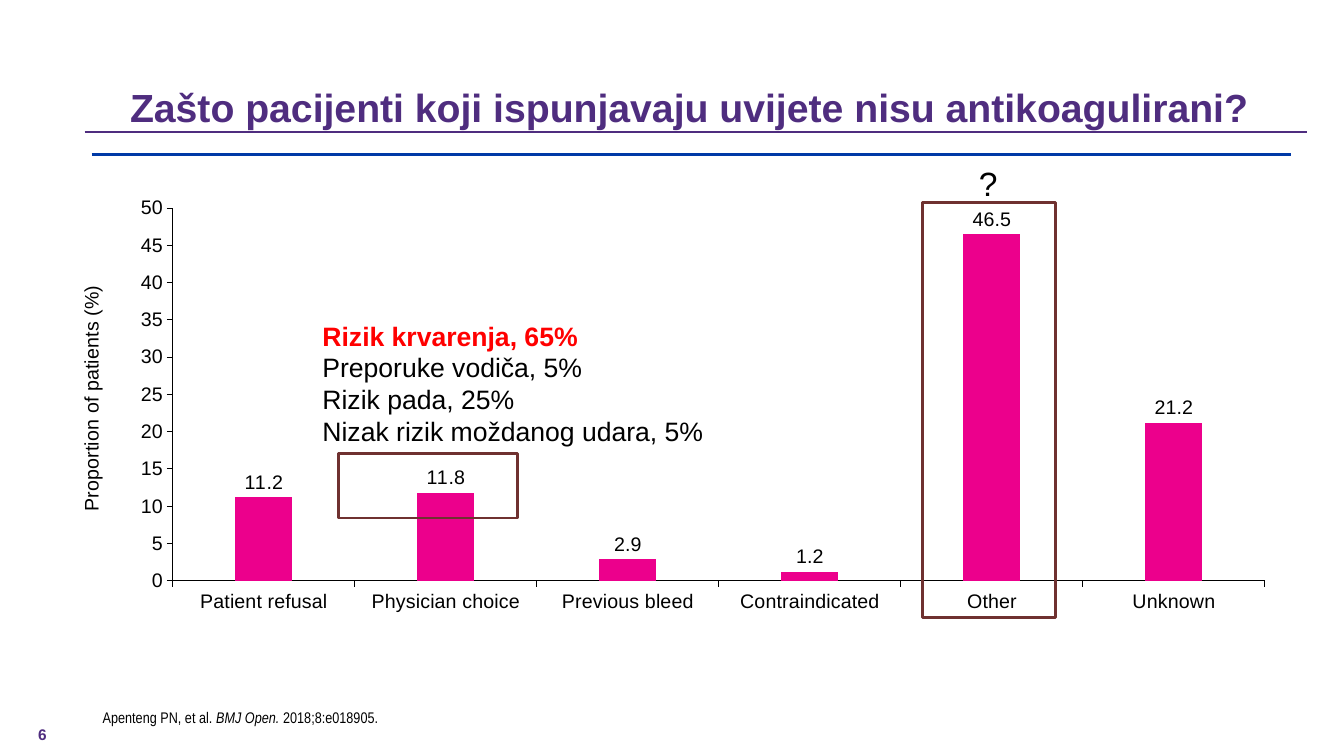
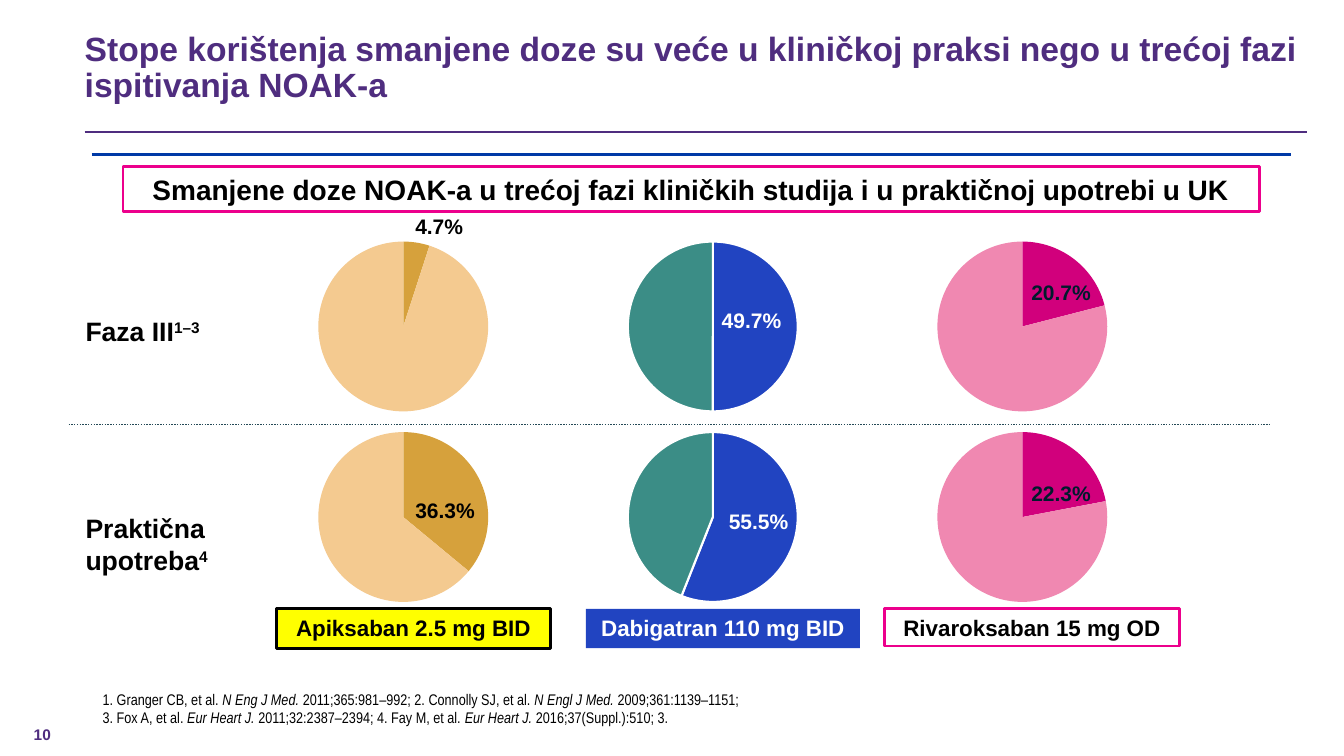
from lxml import etree
from pptx import Presentation
from pptx.chart.data import CategoryChartData
from pptx.dml.color import RGBColor
from pptx.enum.chart import XL_CHART_TYPE as CHART, XL_LABEL_POSITION, XL_TICK_MARK
from pptx.enum.dml import MSO_LINE
from pptx.enum.shapes import MSO_CONNECTOR, MSO_SHAPE
from pptx.enum.text import MSO_ANCHOR as ANCHOR, MSO_AUTO_SIZE, PP_ALIGN as ALIGN
from pptx.oxml import parse_xml
from pptx.oxml.ns import nsdecls, qn
from pptx.util import Inches, Pt

rgb = RGBColor.from_string
PURPLE, NAVY, MAGENTA, BLUE = "4F2D7F", "0039A6", "EC008C", "2144C1"
BLACK, WHITE, RED, BROWN = "000000", "FFFFFF", "FF0000", "6F3130"


def add_text(slide, box, lines, size, color=BLACK, bold=False, font="Arial",
             align=ALIGN.LEFT, anchor=ANCHOR.TOP, fill=None, outline=None, margin=True):
    """Add text, in a rectangle if filled; *...* is italic and ^...^ is superscript."""
    place = [Inches(v) for v in box]
    if fill:
        shape = slide.shapes.add_shape(MSO_SHAPE.RECTANGLE, *place)
        shape.shadow.inherit = False
        shape.fill.solid()
        shape.fill.fore_color.rgb = rgb(fill)
        if outline:
            shape.line.color.rgb = rgb(outline)
            shape.line.width = Pt(2)
        else:
            shape.line.fill.background()
    else:
        shape = slide.shapes.add_textbox(*place)
    frame = shape.text_frame
    frame.word_wrap = True
    frame.vertical_anchor = anchor
    if not margin:
        frame.margin_left = frame.margin_right = frame.margin_top = frame.margin_bottom = 0
    for number, line in enumerate(lines):
        paragraph = frame.add_paragraph() if number else frame.paragraphs[0]
        paragraph.alignment = align
        paragraph.font.size = Pt(size)
        paragraph.font.name = font
        paragraph.font.bold = bold
        paragraph.font.color.rgb = rgb(color)
        mark = "^" if "^" in line else "*"
        for index, part in enumerate(line.split(mark)):
            if not part:
                continue
            run = paragraph.add_run()
            run.text = part
            if index % 2 and mark == "*":
                run.font.italic = True
            elif index % 2:
                run._r.get_or_add_rPr().set("baseline", "30000")
    return frame


def add_chart(slide, kind, box, plot, categories, values, size):
    """Add a one-series chart without background; plot gives the plot area as fractions."""
    data = CategoryChartData()
    data.categories = categories
    data.add_series("Series 1", values)
    chart = slide.shapes.add_chart(kind, *[Inches(v) for v in box], data).chart
    chart.has_legend = chart.has_title = False
    chart.font.size = Pt(size)
    chart.font.name = "Arial"
    chart.font.color.rgb = rgb(BLACK)
    root = chart._chartSpace
    root.find(qn("c:chart")).addnext(parse_xml(
        f'<c:spPr {nsdecls("c", "a")}><a:noFill/><a:ln><a:noFill/></a:ln></c:spPr>'))
    area = root.find(".//" + qn("c:plotArea"))
    for old in area.findall(qn("c:layout")):
        area.remove(old)
    sizes = "".join(f'<c:{k} val="{v}"/>' for k, v in zip("xywh", plot))
    area.insert(0, parse_xml(
        f'<c:layout {nsdecls("c")}><c:manualLayout><c:layoutTarget val="inner"/>'
        f'<c:xMode val="edge"/><c:yMode val="edge"/>{sizes}</c:manualLayout></c:layout>'))
    return chart


prs = Presentation()
prs.slide_width, prs.slide_height = Inches(13.33), Inches(7.5)

# Title, rules and slide number
headers = [
    ("Zašto pacijenti koji ispunjavaju uvijete nisu antikoagulirani?",
     28, ALIGN.CENTER, (0.89, 0.03, 11.89, 1.27), "6"),
    ("Stope korištenja smanjene doze su veće u kliničkoj praksi nego u trećoj fazi "
     "ispitivanja NOAK-a", 24, ALIGN.LEFT, (0.84, 0.31, 12.13, 0.73), "10"),
]
header_rules = [(0.84, 12.96, 1.31, PURPLE, 1, None), (0.91, 12.8, 1.53, NAVY, 2.25, None)]
row_divider = (0.68, 12.61, 4.21, "244956", 1, MSO_LINE.ROUND_DOT)
slides = []
for (heading, size, align, box, number), extra in zip(headers, ([], [row_divider])):
    slide = prs.slides.add_slide(prs.slide_layouts[5])
    slides.append(slide)
    title = slide.shapes.title
    title.left, title.top, title.width, title.height = [Inches(v) for v in box]
    frame = title.text_frame
    frame.text = heading
    frame.auto_size = MSO_AUTO_SIZE.NONE
    frame.vertical_anchor = ANCHOR.BOTTOM
    frame.margin_left = frame.margin_right = frame.margin_top = frame.margin_bottom = 0
    paragraph = frame.paragraphs[0]
    paragraph.alignment = align
    paragraph.line_spacing = 0.9
    paragraph.font.size = Pt(size)
    paragraph.font.name = "Arial"
    paragraph.font.bold = True
    paragraph.font.color.rgb = rgb(PURPLE)
    for left, right, y, color, width, dash in header_rules + extra:
        rule = slide.shapes.add_connector(
            MSO_CONNECTOR.STRAIGHT, Inches(left), Inches(y), Inches(right), Inches(y))
        rule.line.color.rgb = rgb(color)
        rule.line.width = Pt(width)
        if dash:
            rule.line.dash_style = dash
        etree.SubElement(rule._element.spPr, qn("a:effectLst"))
    add_text(slide, (0, 7.19, 0.84, 0.19), [number], 11, PURPLE, True,
             align=ALIGN.CENTER, anchor=ANCHOR.BOTTOM, margin=False)
reasons, doses = slides

# Reasons for no anticoagulation
chart = add_chart(
    reasons, CHART.COLUMN_CLUSTERED, (0.62, 1.85, 12.17, 4.3), (0.09, 0.05, 0.89, 0.86),
    ["Patient refusal", "Physician choice", "Previous bleed", "Contraindicated", "Other",
     "Unknown"], [11.2, 11.8, 2.9, 1.2, 46.5, 21.2], 14)
for axis in (chart.category_axis, chart.value_axis):
    axis.has_major_gridlines = False
    axis.major_tick_mark = XL_TICK_MARK.OUTSIDE
    axis.format.line.color.rgb = rgb(BLACK)
    axis.format.line.width = Pt(0.75)
percent = chart.value_axis
percent.minimum_scale, percent.maximum_scale, percent.major_unit = 0, 50, 5
axis_title = percent.axis_title.text_frame
axis_title.text = "Proportion of patients (%)"
axis_title.paragraphs[0].font.size = Pt(14)
axis_title.paragraphs[0].font.bold = False
title_element = percent.axis_title._element
for old in title_element.findall(qn("c:layout")):
    title_element.remove(old)
title_element.find(qn("c:tx")).addnext(parse_xml(
    f'<c:layout {nsdecls("c")}><c:manualLayout><c:xMode val="edge"/><c:yMode val="edge"/>'
    '<c:x val="0.01"/><c:y val="0.22"/></c:manualLayout></c:layout>'))
columns = chart.plots[0]
columns.gap_width, columns.overlap = 219, -27
columns.vary_by_categories = False
columns.has_data_labels = True
columns.data_labels.show_value = True
columns.data_labels.position = XL_LABEL_POSITION.OUTSIDE_END
columns.series[0].format.fill.solid()
columns.series[0].format.fill.fore_color.rgb = rgb(MAGENTA)

for box in ((3.36, 4.5, 1.77, 0.64), (9.15, 2.01, 1.32, 4.12)):
    highlight = reasons.shapes.add_shape(MSO_SHAPE.RECTANGLE, *[Inches(v) for v in box])
    highlight.shadow.inherit = False
    highlight.fill.background()
    highlight.line.color.rgb = rgb(BROWN)
    highlight.line.width = Pt(2)
risks = add_text(reasons, (3.1, 3.12, 4.2, 1.38),
                 ["Rizik krvarenja, 65%", "Preporuke vodiča, 5%", "Rizik pada, 25%",
                  "Nizak rizik moždanog udara, 5%"], 19)
risks.paragraphs[0].font.bold = True
risks.paragraphs[0].font.color.rgb = rgb(RED)
add_text(reasons, (9.61, 1.57, 0.45, 0.5), ["?"], 24)
add_text(reasons, (0.92, 6.97, 9.31, 0.29), ["Apenteng PN, et al. *BMJ Open.* 2018;8:e018905."],
         11, font="Arial Narrow", anchor=ANCHOR.BOTTOM)

# Reduced doses: one column per drug, one row per setting
add_text(doses, (1.22, 1.65, 11.27, 0.45),
         ["Smanjene doze NOAK-a u trećoj fazi kliničkih studija i u praktičnoj upotrebi u UK"],
         20, bold=True, align=ALIGN.CENTER, anchor=ANCHOR.MIDDLE, fill=WHITE, outline=MAGENTA)
# Slice colours, slice border, label colour, then share and label place for each row
drugs = [
    (("D6A13C", "F4CA90"), None, BLACK, [(4.7, 4.02, 2.07), (36.3, 4.02, 4.89)]),
    ((BLUE, "3B8D86"), WHITE, WHITE, [(49.7, 7.06, 3), (55.5, 7.13, 5)]),
    (("D1007C", "F088B1"), None, "001B2D", [(20.7, 10.13, 2.72), (22.3, 10.13, 4.72)]),
]
for column, (colors, border, label_color, shares) in enumerate(drugs):
    for row, (share, label_x, label_y) in enumerate(shares):
        box = (2.43 + 3.07 * column, 2.26 + 1.89 * row, 3.14, 1.96)
        pie = add_chart(doses, CHART.PIE, box, (0.23, 0.07, 0.54, 0.86), ["1", "2"],
                        [round(share), 100 - round(share)], 18).plots[0]
        pie.vary_by_categories = False
        for index, color in enumerate(colors):
            slice_format = pie.series[0].points[index].format
            slice_format.fill.solid()
            slice_format.fill.fore_color.rgb = rgb(color)
            if border:
                slice_format.line.color.rgb = rgb(border)
                slice_format.line.width = Pt(1.5)
            else:
                slice_format.line.fill.background()
        add_text(doses, (label_x, label_y, 0.99, 0.35), [f"{share}%"], 15, label_color, True)

for y, width, height, setting in ((3.07, 2.3, 0.42, "Faza III^1–3^"),
                                  (5.03, 1.6, 0.74, "Praktična upotreba^4^")):
    add_text(doses, (0.75, y, width, height), [setting], 19, bold=True)
for box, drug, color, fill, outline in (
        ((2.74, 6.04, 2.72, 0.39), "Apiksaban 2.5 mg BID", BLACK, "FFFF00", BLACK),
        ((5.81, 6.04, 2.72, 0.39), "Dabigatran 110 mg BID", WHITE, BLUE, None),
        ((8.77, 6.04, 2.93, 0.37), "Rivaroksaban 15 mg OD", BLACK, WHITE, MAGENTA)):
    add_text(doses, box, [drug], 16, color, True, align=ALIGN.CENTER, fill=fill, outline=outline)
add_text(doses, (0.92, 6.5, 8.77, 0.76),
         ["1. Granger CB, et al. *N Eng J Med.* 2011;365:981–992; "
          "2. Connolly SJ, et al. *N Engl J Med.* 2009;361:1139–1151;",
          "3. Fox A, et al. *Eur Heart J.* 2011;32:2387–2394; "
          "4. Fay M, et al. *Eur Heart J.* 2016;37(Suppl.):510; 3."],
         11, font="Arial Narrow", anchor=ANCHOR.BOTTOM)

prs.save("out.pptx")
